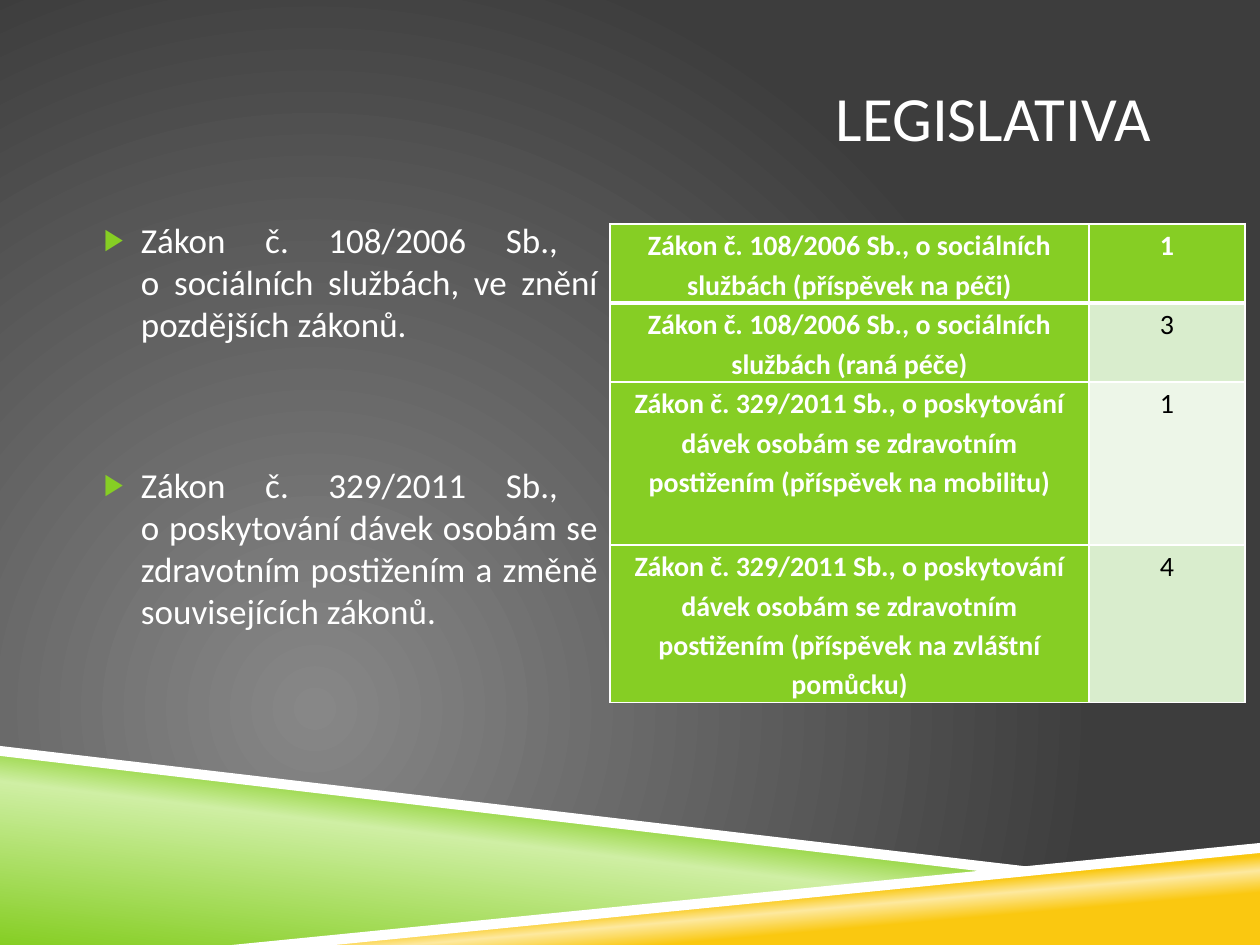
from lxml import etree
from pptx import Presentation
from pptx import util as u
from pptx.dml.color import RGBColor
from pptx.enum import text
from pptx.oxml.ns import qn

SCALE = 914400 / 126
FONT = "Calibri"
WHITE = RGBColor(0xFF, 0xFF, 0xFF)
BLACK = RGBColor(0, 0, 0)
GREEN = RGBColor(0x86, 0xCE, 0x24)
LIME = RGBColor(0xCF, 0xEF, 0xA4)
GOLD = RGBColor(0xFA, 0xC8, 0x10)
CREAM = RGBColor(0xFD, 0xE9, 0x9F)
GREY = RGBColor(0x87, 0x87, 0x87)
DARK = RGBColor(0x3D, 0x3D, 0x3D)
MINT = RGBColor(0xD9, 0xED, 0xCD)
PALE = RGBColor(0xED, 0xF6, 0xE8)

LAWS = [
    ("Zákon č. 108/2006 Sb., ",
     "o sociálních službách, ve znění pozdějších zákonů."),
    ("Zákon č. 329/2011 Sb., ",
     "o poskytování dávek osobám se zdravotním postižením "
     "a změně souvisejících zákonů. "),
]
ROWS = [
    ("Zákon č. 108/2006 Sb., o sociálních službách (příspěvek na péči)", "1", 79),
    ("Zákon č. 108/2006 Sb., o sociálních službách (raná péče)", "3", 79),
    ("Zákon č. 329/2011 Sb., o poskytování dávek osobám se zdravotním "
     "postižením (příspěvek na mobilitu)", "1", 163),
    ("Zákon č. 329/2011 Sb., o poskytování dávek osobám se zdravotním "
     "postižením (příspěvek na zvláštní pomůcku)", "4", 157),
]


def px(n):
    return u.Emu(round(n * SCALE))


def sub(parent, tag, **attrs):
    node = etree.SubElement(parent, qn(tag))
    for key, val in attrs.items():
        node.set(key, str(val))
    return node


def grade(fill, stops, angle=None):
    """Linear gradient at an angle, or a circular one without it."""
    fill.gradient()
    grad = fill._xPr.find(qn("a:gradFill"))
    for node in list(grad):
        grad.remove(node)
    group = sub(grad, "a:gsLst")
    for pos, color in stops:
        sub(sub(group, "a:gs", pos=pos * 1000), "a:srgbClr", val=color)
    if angle is None:
        way = sub(grad, "a:path", path="circle")
        sub(way, "a:fillToRect", l=50000, t=100000, r=100000, b=50000)
    else:
        sub(grad, "a:lin", ang=angle * 60000, scaled=0)


def write(para, words, size, color, bold=False):
    run = para.add_run()
    run.text = words
    font = run.font
    font.name, font.size, font.bold = FONT, u.Pt(size), bold
    font.color.rgb = color


def band(slide, left, top, points):
    """Polygon without outline; points are relative to left and top."""
    form = slide.shapes.build_freeform(*points[0], scale=SCALE)
    form.add_line_segments(points[1:], close=True)
    shape = form.convert_to_shape(px(left), px(top))
    shape.shadow.inherit = False
    shape.line.fill.background()
    return shape


def decor(slide):
    gold = band(slide, 249, 847, [(0, 98), (1011, 0), (1011, 98)])
    grade(gold.fill, [(28, GOLD), (40, CREAM), (48, GOLD)], 265)
    green = band(slide, 0, 752, [(0, 0), (998, 120), (252, 193), (0, 193)])
    grade(green.fill, [(0, GREEN), (52, LIME), (66, GREEN)], 277)
    strips = [
        band(slide, 0, 746, [(0, 0), (0, 10), (995, 127), (1048, 123)]),
        band(slide, 232, 843, [(1028, 0), (0, 102), (103, 102), (1028, 10)]),
    ]
    for strip in strips:
        strip.fill.solid()
        strip.fill.fore_color.rgb = WHITE


def place(slide, holder, box, anchor):
    """Move a placeholder into the box, in front of the other shapes."""
    slide.shapes._spTree.append(holder._element)
    holder.left, holder.top, holder.width, holder.height = map(px, box)
    frame = holder.text_frame
    frame.margin_left = frame.margin_right = 0
    frame.margin_top = frame.margin_bottom = px(6)
    frame.vertical_anchor = anchor
    frame.auto_size = text.MSO_AUTO_SIZE.NONE
    frame.word_wrap = True
    return frame


def title(slide, box):
    frame = place(slide, slide.shapes.title, box, text.MSO_ANCHOR.MIDDLE)
    para = frame.paragraphs[0]
    para.alignment = text.PP_ALIGN.RIGHT
    write(para, "LEGISLATIVA ", 36, WHITE)


def laws(slide, box):
    frame = place(slide, slide.placeholders[1], box, text.MSO_ANCHOR.TOP)
    for i, (name, topic) in enumerate(LAWS):
        para = frame.add_paragraph() if i else frame.paragraphs[0]
        para.alignment = text.PP_ALIGN.JUSTIFY
        para.space_before = u.Pt(68 if i else 0)
        props = para._p.get_or_add_pPr()
        props.set("marL", str(px(47)))
        props.set("indent", str(px(-37)))
        sub(sub(props, "a:buClr"), "a:srgbClr", val=GREEN)
        sub(props, "a:buSzPct", val=85000)
        sub(props, "a:buChar", char="▶")
        write(para, name, 20, WHITE)
        para.add_line_break()
        write(para, topic, 20, WHITE)


def edge(cell, row):
    """White borders, thick between the header and the rows below."""
    props = cell._tc.get_or_add_tcPr()
    for side in "LRTB":
        thick = (row, side) in ((0, "B"), (1, "T"))
        line = sub(props, "a:ln" + side, w=u.Pt(3 if thick else 1))
        sub(sub(line, "a:solidFill"), "a:srgbClr", val=WHITE)


def grid(slide, box):
    frame = slide.shapes.add_table(len(ROWS), 2, *map(px, box))
    table = frame.table
    for col, width in zip(table.columns, (479, box[2] - 479)):
        col.width = px(width)
    for i, (law, count, height) in enumerate(ROWS):
        table.rows[i].height = px(height)
        for j, words in enumerate((law, count)):
            cell = table.cell(i, j)
            head = i == 0 or j == 0
            edge(cell, i)
            cell.fill.solid()
            cell.fill.fore_color.rgb = GREEN if head else (PALE, MINT)[i % 2]
            cell.margin_left = cell.margin_right = px(6)
            cell.margin_top = cell.margin_bottom = 0
            para = cell.text_frame.paragraphs[0]
            para.alignment = text.PP_ALIGN.CENTER
            para.line_spacing = 1.15
            write(para, words, 16, WHITE if head else BLACK, head)


def main():
    deck = Presentation()
    deck.slide_width, deck.slide_height = px(1260), px(945)
    slide = deck.slides.add_slide(deck.slide_layouts[1])
    grade(slide.background.fill, [(0, GREY), (100, DARK)])
    decor(slide)
    title(slide, (94, 38, 1071, 157))
    laws(slide, (94, 212, 504, 534))
    grid(slide, (610, 224, 635, 478))
    deck.save("out.pptx")


if __name__ == "__main__":
    main()
